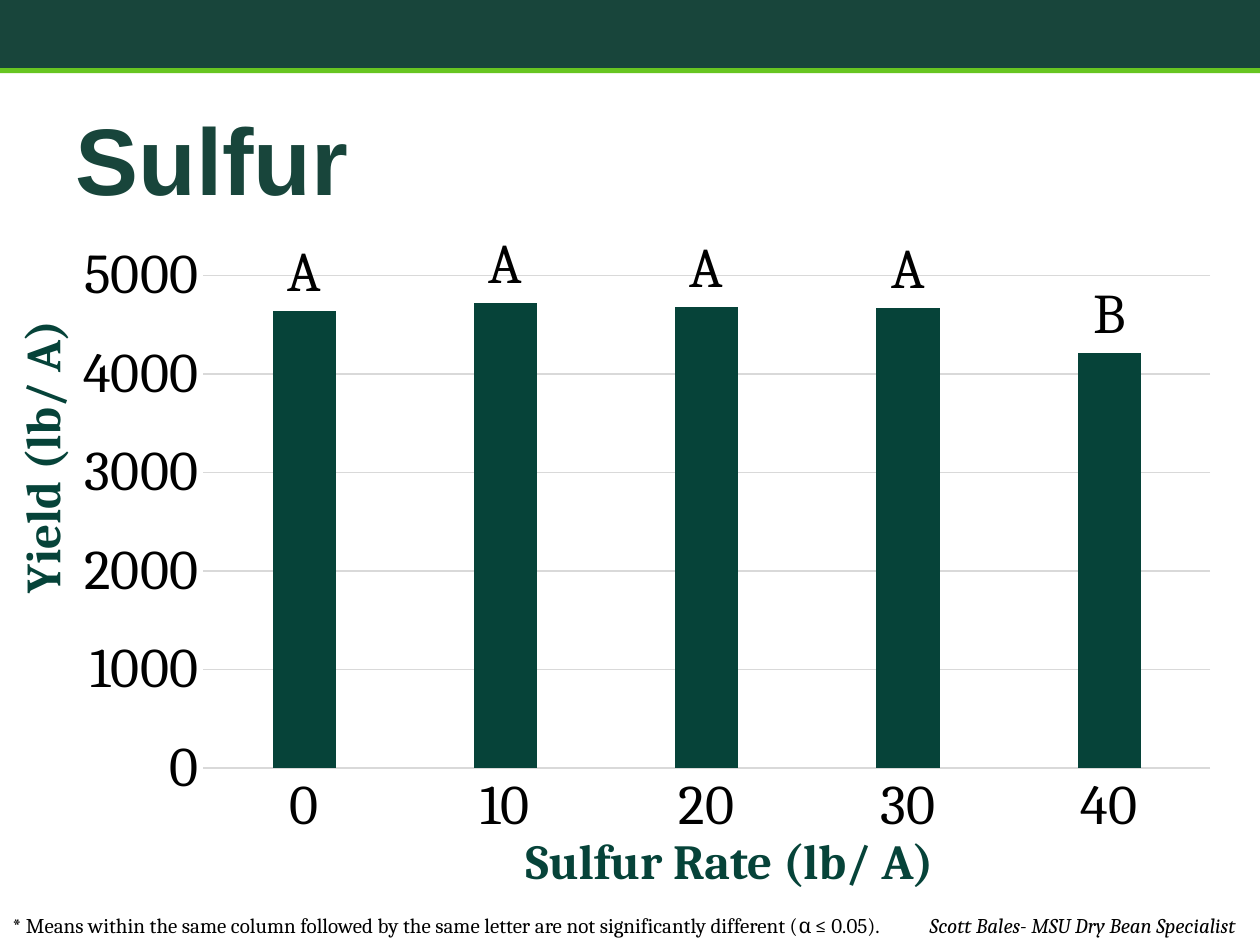
"""Build the sulfur rate yield slide."""
from dataclasses import dataclass

import pptx
import pptx.chart.data
import pptx.dml.color
import pptx.enum.chart
import pptx.enum.shapes
import pptx.enum.text
import pptx.oxml
import pptx.oxml.ns
import pptx.util


@dataclass(frozen=True)
class Theme:
    banner: str = "18453B"
    accent: str = "67C521"
    bar: str = "064339"
    ink: str = "000000"
    grid: str = "D9D9D9"
    heading_font: str = "Arial"
    body_font: str = "Cambria"
    title: int = 54
    chart: int = 32
    axis: int = 28
    note: int = 12


class Deck:
    COLS, ROWS = 100, 75

    def __init__(self, theme):
        self.theme = theme
        self.prs = pptx.Presentation()
        self.prs.slide_width = pptx.util.Inches(10)
        self.prs.slide_height = pptx.util.Inches(7.5)
        self.s = self.prs.slides.add_slide(self.prs.slide_layouts[5])

    def box(self, col, row, cols, rows):
        x = self.prs.slide_width / self.COLS
        y = self.prs.slide_height / self.ROWS
        return [round(v) for v in (col * x, row * y, cols * x, rows * y)]

    def font(self, font, size, color, name=None, bold=False, italic=False):
        font.name = name or self.theme.body_font
        font.size = pptx.util.Pt(size)
        font.bold, font.italic = bold, italic
        font.color.rgb = pptx.dml.color.RGBColor.from_string(color)

    def band(self, grid, color):
        sp = self.s.shapes.add_shape(
            pptx.enum.shapes.MSO_SHAPE.RECTANGLE, *self.box(*grid))
        sp.shadow.inherit = False
        sp.fill.solid()
        sp.fill.fore_color.rgb = pptx.dml.color.RGBColor.from_string(color)
        sp.line.fill.background()

    def title(self, text, grid):
        sp = self.s.shapes.title
        sp.left, sp.top, sp.width, sp.height = self.box(*grid)
        tf = sp.text_frame
        tf.text = text
        tf.auto_size = pptx.enum.text.MSO_AUTO_SIZE.NONE
        tf.vertical_anchor = pptx.enum.text.MSO_ANCHOR.TOP
        tf.margin_top = pptx.util.Inches(0.11)
        p = tf.paragraphs[0]
        p.alignment = pptx.enum.text.PP_ALIGN.LEFT
        self.font(p.font, self.theme.title, self.theme.banner,
                  self.theme.heading_font, bold=True)

    def text(self, text, grid, size, color, centered=False, rotation=0, **style):
        sp = self.s.shapes.add_textbox(*self.box(*grid))
        sp.rotation = rotation
        tf = sp.text_frame
        tf.word_wrap = True
        tf.text = text
        p = tf.paragraphs[0]
        align = pptx.enum.text.PP_ALIGN
        p.alignment = align.CENTER if centered else align.LEFT
        self.font(p.font, size, color, **style)

    def rule(self, line):
        line.color.rgb = pptx.dml.color.RGBColor.from_string(self.theme.grid)
        line.width = pptx.util.Pt(0.75)

    def columns(self, cats, values, letters, grid, plot_area):
        t, enum = self.theme, pptx.enum.chart
        data = pptx.chart.data.CategoryChartData()
        data.categories = cats
        data.add_series("Series 1", values)
        chart = self.s.shapes.add_chart(
            enum.XL_CHART_TYPE.COLUMN_CLUSTERED, *self.box(*grid), data).chart
        chart.has_legend = chart.has_title = False
        self.font(chart.font, t.chart, t.ink)

        for axis in (chart.category_axis, chart.value_axis):
            axis.major_tick_mark = axis.minor_tick_mark = enum.XL_TICK_MARK.NONE
            self.font(axis.tick_labels.font, t.chart, t.ink)
        self.rule(chart.category_axis.format.line)
        axis = chart.value_axis
        axis.minimum_scale, axis.maximum_scale, axis.major_unit = 0, 5000, 1000
        axis.format.line.fill.background()
        self.rule(axis.major_gridlines.format.line)

        plot = chart.plots[0]
        plot.gap_width, plot.overlap, plot.vary_by_categories = 219, -27, False
        series = plot.series[0]
        series.format.fill.solid()
        series.format.fill.fore_color.rgb = pptx.dml.color.RGBColor.from_string(t.bar)
        series.data_labels.show_value = True
        self.font(series.data_labels.font, t.chart, t.ink)
        for i, letter in enumerate(letters):
            label = series.points[i].data_label
            label.text_frame.text = letter
            self.font(label.text_frame.paragraphs[0].runs[0].font, t.chart, t.ink)
            label.position = enum.XL_LABEL_POSITION.OUTSIDE_END
        self.place_plot(chart, plot_area)

    def place_plot(self, chart, shares):
        area = chart.plots._plotArea if hasattr(chart.plots, "_plotArea") else \
            chart.element.find(".//" + pptx.oxml.ns.qn("c:plotArea"))
        for old in area.findall(pptx.oxml.ns.qn("c:layout")):
            area.remove(old)
        sizes = "".join(f'<c:{k} val="{v}"/>' for k, v in zip("xywh", shares))
        area.insert(0, pptx.oxml.parse_xml(
            f'<c:layout {pptx.oxml.ns.nsdecls("c")}><c:manualLayout>'
            '<c:layoutTarget val="inner"/><c:xMode val="edge"/>'
            f'<c:yMode val="edge"/>{sizes}</c:manualLayout></c:layout>'))


def main():
    t = Theme()
    deck = Deck(t)
    deck.band((0, 5.3, 100, 0.5), t.accent)
    deck.band((0, 0, 100, 5.4), t.banner)
    deck.title("Sulfur", (5, 6.9, 90, 5.3))
    deck.text("Scott Bales- MSU Dry Bean Specialist", (72.8, 71.9, 27.2, 3),
              t.note, t.ink, italic=True)
    deck.text("* Means within the same column followed by the same letter "
              "are not significantly different (α ≤ 0.05).",
              (0, 71.9, 72.8, 3), t.note, t.ink)
    deck.columns(["0", "10", "20", "30", "40"], [4644, 4725, 4678, 4673, 4218],
                 "AAAAB", (5, 18.4, 92.9, 49.5), (0.12, 0.07, 0.86, 0.79))
    deck.text("Yield (lb/ A)", (-9.3, 33.4, 25.1, 5.7), t.axis, t.bar,
              centered=True, rotation=270, bold=True)
    deck.text("Sulfur Rate (lb/ A)", (39.9, 65.4, 36, 5.7), t.axis, t.bar,
              centered=True, bold=True)
    deck.prs.save("out.pptx")


if __name__ == "__main__":
    main()
